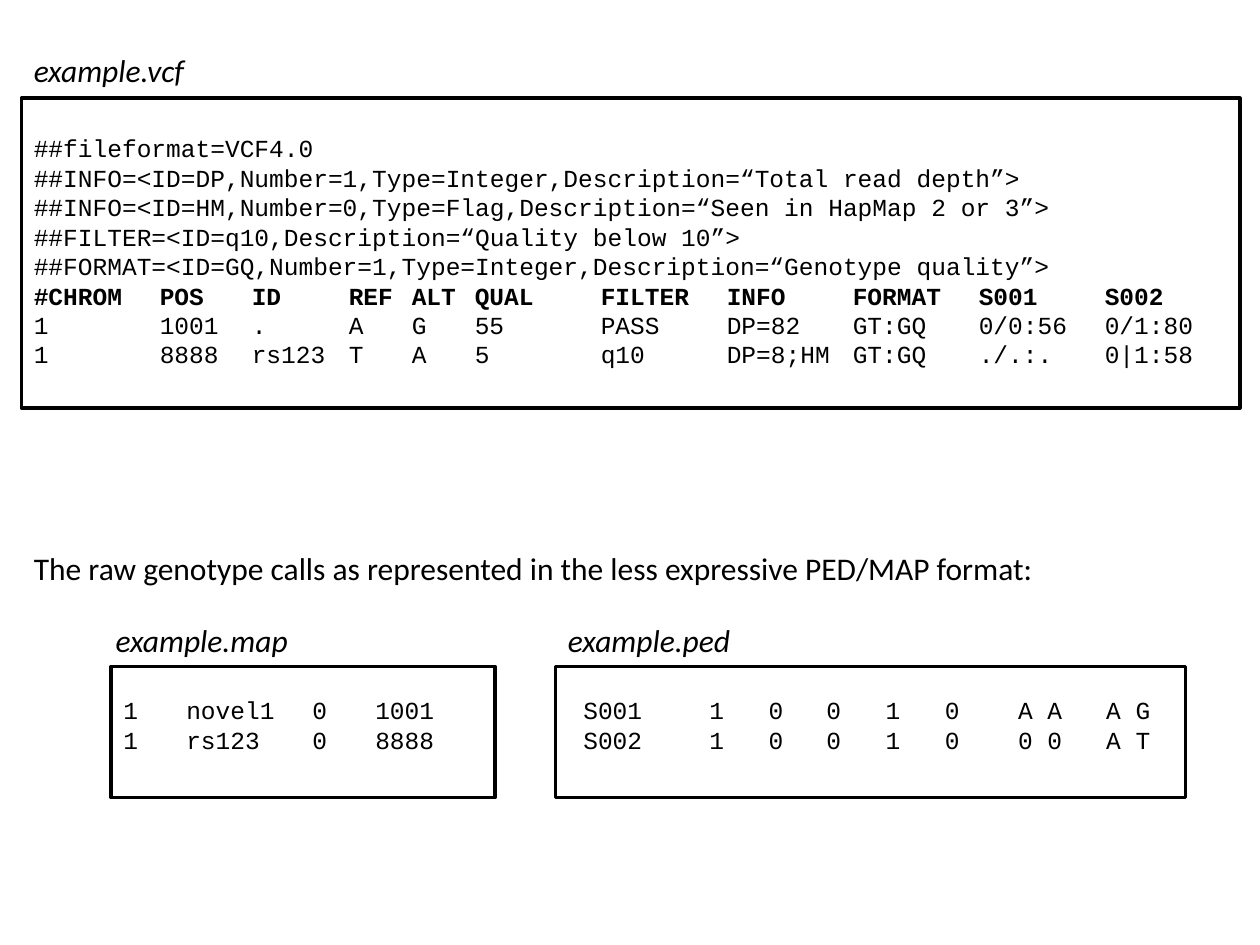
import pptx
import pptx.dml.color
import pptx.enum.shapes
import pptx.enum.text
import pptx.oxml.ns
import pptx.util
from lxml import etree
from pptx.util import Inches

BLACK, WHITE = "000000", "FFFFFF"
CAPTION = {"name": "Calibri", "size": pptx.util.Pt(18)}
FILE_NAME = {**CAPTION, "italic": True}
CODE = {"name": "Courier New", "size": pptx.util.Pt(14), "bold": False}
CODE_HEADER = {**CODE, "bold": True}

VCF_META = [
    "##fileformat=VCF4.0",
    "##INFO=<ID=DP,Number=1,Type=Integer,Description=“Total read depth”>",
    "##INFO=<ID=HM,Number=0,Type=Flag,Description=“Seen in HapMap 2 or 3”>",
    "##FILTER=<ID=q10,Description=“Quality below 10”>",
    "##FORMAT=<ID=GQ,Number=1,Type=Integer,Description=“Genotype quality”>",
]
VCF_HEADER = ["#CHROM", "POS", "ID", "REF", "ALT", "QUAL", "FILTER", "INFO",
              "FORMAT", "S001", "S002"]
VCF_RECORDS = [
    ["1", "1001", ".", "A", "G", "55", "PASS", "DP=82", "GT:GQ", "0/0:56", "0/1:80"],
    ["1", "8888", "rs123", "T", "A", "5", "q10", "DP=8;HM", "GT:GQ", "./.:.", "0|1:58"],
]
VCF_STOPS = [1, 1.73, 2.5, 3, 3.5, 4.5, 5.5, 6.5, 7.5, 8.5]

MAP_RECORDS = [["1", "novel1", "0", "1001"], ["1", "rs123", "0", "8888"]]
MAP_STOPS = [0.5, 1.5, 2]

PED_RECORDS = [
    ["S001", "1", "0", "0", "1", "0", "A A", "A G"],
    ["S002", "1", "0", "0", "1", "0", "0 0", "A T"],
]
PED_STOPS = [1, 1.47, 1.93, 2.4, 2.87, 3.45, 4.15]


def color(hex_value):
    return pptx.dml.color.RGBColor.from_string(hex_value)


def set_attributes(target, values):
    for name, value in values.items():
        setattr(target, name, value)


def write_run(paragraph, text, font_format):
    paragraph.alignment = pptx.enum.text.PP_ALIGN.LEFT
    run = paragraph.add_run()
    run.text = text
    set_attributes(run.font, font_format)
    run.font.color.rgb = color(BLACK)


def set_tab_stops(paragraph, stops):
    tab_list = etree.SubElement(paragraph._p.get_or_add_pPr(),
                                pptx.oxml.ns.qn("a:tabLst"))
    for stop in stops:
        etree.SubElement(tab_list, pptx.oxml.ns.qn("a:tab"),
                         pos=str(Inches(stop)), algn="l")


def add_caption(slide, box, text, font_format):
    text_box = slide.shapes.add_textbox(*map(Inches, box))
    text_frame = text_box.text_frame
    text_frame.word_wrap = False
    text_frame.auto_size = pptx.enum.text.MSO_AUTO_SIZE.SHAPE_TO_FIT_TEXT
    write_run(text_frame.paragraphs[0], text, font_format)


def add_file_box(slide, box, lines, stops, margin_left=0.1):
    """Draw a framed listing; lines holds (cells, font format) pairs."""
    shape = slide.shapes.add_shape(pptx.enum.shapes.MSO_SHAPE.RECTANGLE,
                                   *map(Inches, box))
    shape.shadow.inherit = False
    shape.fill.solid()
    shape.fill.fore_color.rgb = color(WHITE)
    shape.line.color.rgb = color(BLACK)
    shape.line.width = pptx.util.Pt(2)
    text_frame = shape.text_frame
    set_attributes(text_frame, {
        "word_wrap": True,
        "auto_size": pptx.enum.text.MSO_AUTO_SIZE.SHAPE_TO_FIT_TEXT,
        "vertical_anchor": pptx.enum.text.MSO_ANCHOR.TOP,
        "margin_left": Inches(margin_left),
        "margin_right": Inches(0.1),
        "margin_top": Inches(0.28),
        "margin_bottom": Inches(0.29),
    })
    for index, (cells, font_format) in enumerate(lines):
        paragraph = text_frame.add_paragraph() if index else text_frame.paragraphs[0]
        paragraph.line_spacing = pptx.util.Pt(16.8)
        if len(cells) > 1:
            set_tab_stops(paragraph, stops)
        write_run(paragraph, "\t".join(cells), font_format)


def add_vcf_region(slide, left, top, width):
    add_caption(slide, (left, top, 1.47, 0.4), "example.vcf", FILE_NAME)
    lines = [([text], CODE) for text in VCF_META]
    lines.append((VCF_HEADER, CODE_HEADER))
    lines += [(record, CODE) for record in VCF_RECORDS]
    add_file_box(slide, (left, top + 0.42, width, 2.46), lines, VCF_STOPS)


def add_ped_map_region(slide, left, top):
    add_caption(slide, (left, top, 8.15, 0.4),
                "The raw genotype calls as represented in the less expressive "
                "PED/MAP format:", CAPTION)
    files = [
        ("example.map", 0.65, 1.64, 0.71, 3.05, MAP_RECORDS, MAP_STOPS, 0.1),
        ("example.ped", 4.24, 1.56, 4.24, 5, PED_RECORDS, PED_STOPS, 0.22),
    ]
    for name, name_left, name_width, box_left, box_width, records, stops, margin in files:
        add_caption(slide, (left + name_left, top + 0.57, name_width, 0.4),
                    name, FILE_NAME)
        add_file_box(slide, (left + box_left, top + 0.98, box_width, 1.04),
                     [(record, CODE) for record in records], stops, margin)


def main():
    presentation = pptx.Presentation()
    presentation.slide_width = Inches(10)
    presentation.slide_height = Inches(7.5)
    slide = presentation.slides.add_slide(presentation.slide_layouts[6])
    add_vcf_region(slide, 0.17, 0.36, 9.67)
    add_ped_map_region(slide, 0.17, 4.31)
    presentation.save("out.pptx")


if __name__ == "__main__":
    main()
